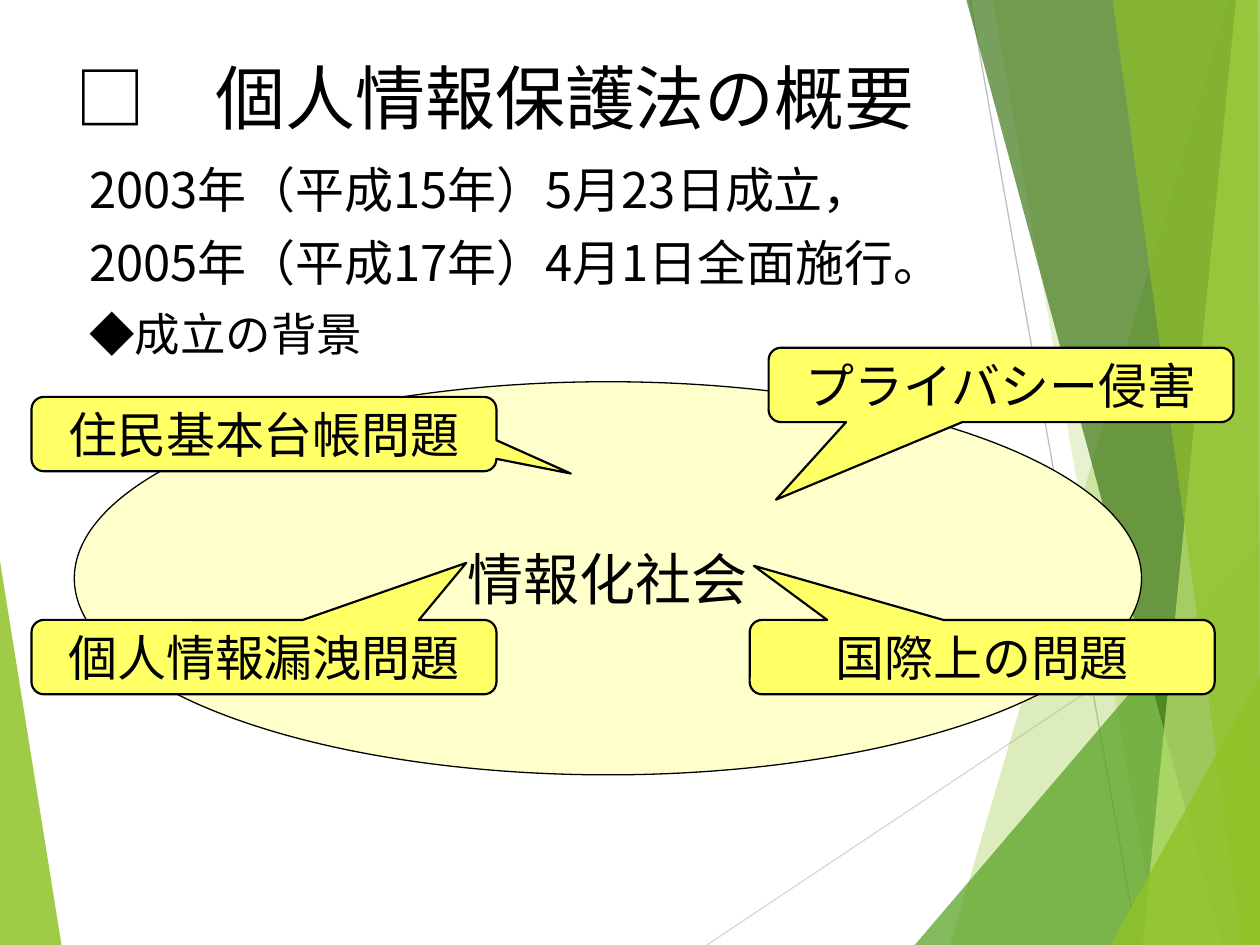
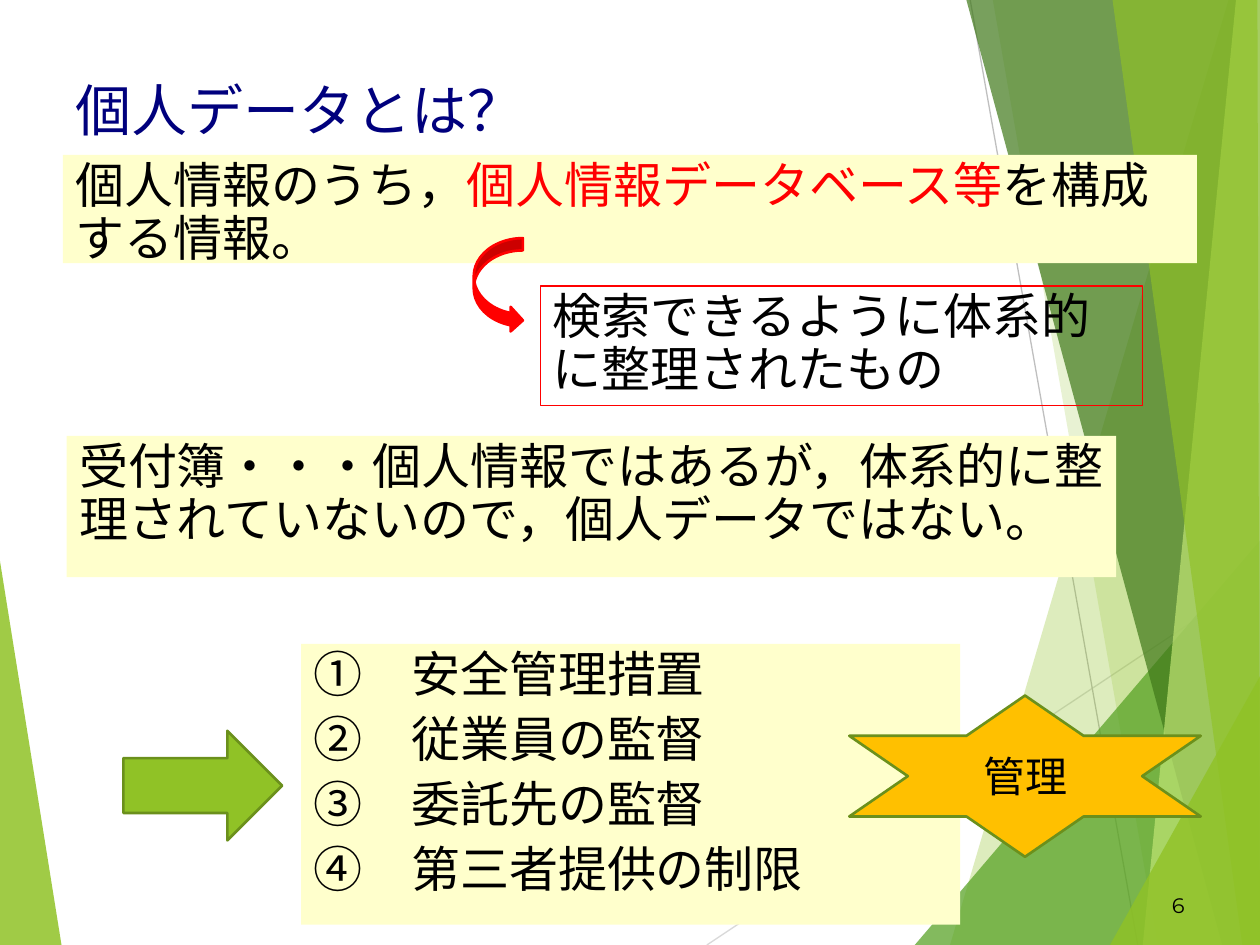
from lxml import etree
from pptx import Presentation, util as u
from pptx.dml.color import RGBColor
from pptx.enum import shapes, text
from pptx.oxml.ns import qn

C = {"black": "000000", "navy": "00007D", "red": "FF0000", "cream": "FFFFCC",
     "yellow": "FFFF66", "amber": "FFC000", "green": "90C226", "edge": "6B901C",
     "leaf": "54A021", "forest": "3F7819", "lime": "C0E474",
     "gray": "BFBFBF", "silver": "D9D9D9"}
SHAPE = shapes.MSO_SHAPE
ALIGN = text.PP_ALIGN
ANCHOR = text.MSO_ANCHOR
NOTO = "Noto Sans CJK JP"


def write(sp, paras, font, size, align=ALIGN.LEFT, anchor=ANCHOR.TOP,
          spacing=None, before=0):
    """Fill a shape with paragraphs, each a list of (text, colour) runs."""
    tf = sp.text_frame
    tf.word_wrap = True
    tf.auto_size = text.MSO_AUTO_SIZE.NONE
    tf.vertical_anchor = anchor
    for i, runs in enumerate(paras):
        p = tf.add_paragraph() if i else tf.paragraphs[0]
        p.alignment = align
        p.space_before = u.Pt(before)
        if spacing:
            p.line_spacing = spacing
        for words, color in runs:
            r = p.add_run()
            r.text = words
            r.font.name = font
            r.font.size = u.Pt(size)
            r.font.color.rgb = RGBColor.from_string(C[color])
            ea = etree.SubElement(r.font._element, qn("a:ea"))
            ea.set("typeface", font)
    return tf


def draw(s, kind, box, fill=None, line=None, width=0.75):
    """Add a preset shape; box is left, top, width, height in inches."""
    sp = s.shapes.add_shape(kind, *[u.Inches(v) for v in box])
    sp.shadow.inherit = False
    if fill:
        sp.fill.solid()
        sp.fill.fore_color.rgb = RGBColor.from_string(C[fill])
    else:
        sp.fill.background()
    if line:
        sp.line.color.rgb = RGBColor.from_string(C[line])
        sp.line.width = u.Pt(width)
    else:
        sp.line.fill.background()
    return sp


prs = Presentation()
prs.slide_width, prs.slide_height = u.Inches(10), u.Inches(7.5)
slides = [prs.slides.add_slide(prs.slide_layouts[5]) for _ in range(2)]

# Shared background: thin lines and translucent facets, moved to the master
s = slides[0]
backdrop = []
for x1, y1, x2, y2, color in [(5.61, 7.5, 10.01, 4.57, "silver"),
                              (7.7, 0, 9.03, 7.5, "gray")]:
    ln = s.shapes.add_connector(shapes.MSO_CONNECTOR.STRAIGHT,
                                *[u.Inches(v) for v in (x1, y1, x2, y2)])
    ln.line.color.rgb = RGBColor.from_string(C[color])
    ln.line.width = u.Pt(0.75)
    etree.SubElement(ln._element.spPr, qn("a:effectLst"))
    backdrop.append(ln)

facets = [
    ("green", 85, [(-0.01, 4.39), (0.49, 7.51), (-0.01, 7.5)]),
    ("green", 30, [(9.75, 0), (7.54, 7.5), (10.02, 7.51), (10.01, 0)]),
    ("green", 20, [(7.88, 0), (9.19, 7.5), (10.01, 7.5), (10.01, 0)]),
    ("leaf", 72, [(7.26, 7.5), (10, 4.29), (10.01, 7.5)]),
    ("forest", 70, [(7.67, 0), (9.7, 7.5), (10.01, 7.5), (10.01, 0)]),
    ("lime", 70, [(9.81, 0), (9.07, 7.5), (10.01, 7.5), (10, 0)]),
    ("green", 65, [(8.83, 0), (9.86, 7.5), (10, 7.5), (9.98, 0)]),
    ("green", 80, [(8.81, 7.5), (10.01, 5.35), (10.01, 7.5)]),
]
for color, alpha, points in facets:
    pts = [(round(x * 100), round(y * 100)) for x, y in points]
    fb = s.shapes.build_freeform(*pts[0], scale=u.Inches(0.01))
    fb.add_line_segments(pts[1:], close=True)
    sp = fb.convert_to_shape()
    sp.shadow.inherit = False
    sp.line.fill.background()
    sp.fill.solid()
    sp.fill.fore_color.rgb = RGBColor.from_string(C[color])
    clr = sp._element.spPr.find(".//" + qn("a:srgbClr"))
    etree.SubElement(clr, qn("a:alpha")).set("val", str(alpha * 1000))
    backdrop.append(sp)

for i, sp in enumerate(backdrop):
    sp._element.xpath(".//p:cNvPr")[0].set("id", str(100 + i))
    prs.slide_master.shapes.element.append(sp._element)

# Titles
titles = [
    ((0.5, 0.3, 8.17, 0.93), "□　個人情報保護法の概要", NOTO, 40, "black"),
    ((0.5, 0.5, 9, 0.73), "個人データとは？", "Arial", 32, "navy"),
]
for s, (box, words, font, size, color) in zip(slides, titles):
    t = s.shapes.title
    t.left, t.top, t.width, t.height = [u.Inches(v) for v in box]
    write(t, [[(words, color)]], font, size, anchor=ANCHOR.MIDDLE)

# Slide 1: the information society
s = slides[0]
society = draw(s, SHAPE.OVAL, (0.59, 3.03, 8.47, 3.12), "cream", "black")
tf = write(society, [[("情報化社会", "black")]], "Calibri", 32,
           ALIGN.CENTER, ANCHOR.MIDDLE)
tf.word_wrap = False

# Dates of the law
dates = s.shapes.add_textbox(u.Inches(0.59), u.Inches(1.22),
                             u.Inches(8.86), u.Inches(1.74))
lines = ["2003年（平成15年）5月23日成立，",
         "2005年（平成17年）4月1日全面施行。",
         "◆成立の背景"]
tf = write(dates, [[(words, "black")] for words in lines], NOTO, 28, before=8)
tf.paragraphs[-1].runs[0].font.size = u.Pt(26)
for p in tf.paragraphs:
    pPr = p._p.get_or_add_pPr()
    pPr.set("marL", str(u.Inches(0.38)))
    pPr.set("indent", str(u.Inches(-0.36)))

# Problem callouts: left, top, pointer x and y, label
callouts = [
    (6.1, 2.76, -0.484, 1.543, "プライバシー侵害"),
    (5.95, 4.92, -0.491, -1.228, "国際上の問題"),
    (0.25, 3.15, 0.66, 0.531, "住民基本台帳問題"),
    (0.25, 4.92, 0.435, -1.267, "個人情報漏洩問題"),
]
for left, top, px, py, label in callouts:
    sp = draw(s, SHAPE.ROUNDED_RECTANGULAR_CALLOUT, (left, top, 3.69, 0.59),
              "yellow", "black", 1.25)
    sp.adjustments[0], sp.adjustments[1] = px, py
    write(sp, [[(label, "black")]], "Calibri", 28, ALIGN.CENTER, ANCHOR.MIDDLE)

# Slide 2: page number
s = slides[1]
number = s.shapes.add_textbox(u.Inches(7.17), u.Inches(6.83),
                              u.Inches(2.33), u.Inches(0.5))
write(number, [[("6", "black")]], "Montserrat", 12, ALIGN.RIGHT, ANCHOR.BOTTOM)

# Definition, duties, explanation and example, with the arrows between them
definition = [[("個人情報のうち，", "black"),
               ("個人情報データベース等", "red"),
               ("を構成する情報。", "black")]]
duties = [[(words, "black")] for words in
          ["①　安全管理措置", "②　従業員の監督", "③　委託先の監督", "④　第三者提供の制限"]]
explanation = [[("検索できるように体系的に整理されたもの", "black")]]
example = [[("受付簿・・・個人情報ではあるが，体系的に整理されていないので，"
             "個人データではない。", "black")]]

draw(s, SHAPE.RIGHT_ARROW, (0.98, 5.8, 1.26, 0.87), "green", "edge", 1.5)
for box, paras, fill, line in [
        ((0.5, 1.23, 9, 0.86), definition, "cream", None),
        ((2.39, 5.11, 5.23, 2.23), duties, "cream", None),
        ((4.29, 2.27, 4.78, 0.95), explanation, None, "red"),
        ((0.53, 3.46, 8.33, 1.12), example, "cream", None)]:
    sp = draw(s, SHAPE.RECTANGLE, box, fill, line)
    write(sp, paras, "Arial", 28, spacing=0.9, before=7)
draw(s, SHAPE.CURVED_RIGHT_ARROW, (3.76, 1.89, 0.39, 0.75), "red", "red", 1.5)

# Management star
star = draw(s, SHAPE.STAR_6_POINT, (6.74, 5.52, 2.79, 1.28), "amber", "edge", 1.5)
write(star, [[("管理", "black")]], "Lato", 24, ALIGN.CENTER, ANCHOR.MIDDLE)

prs.save("out.pptx")
